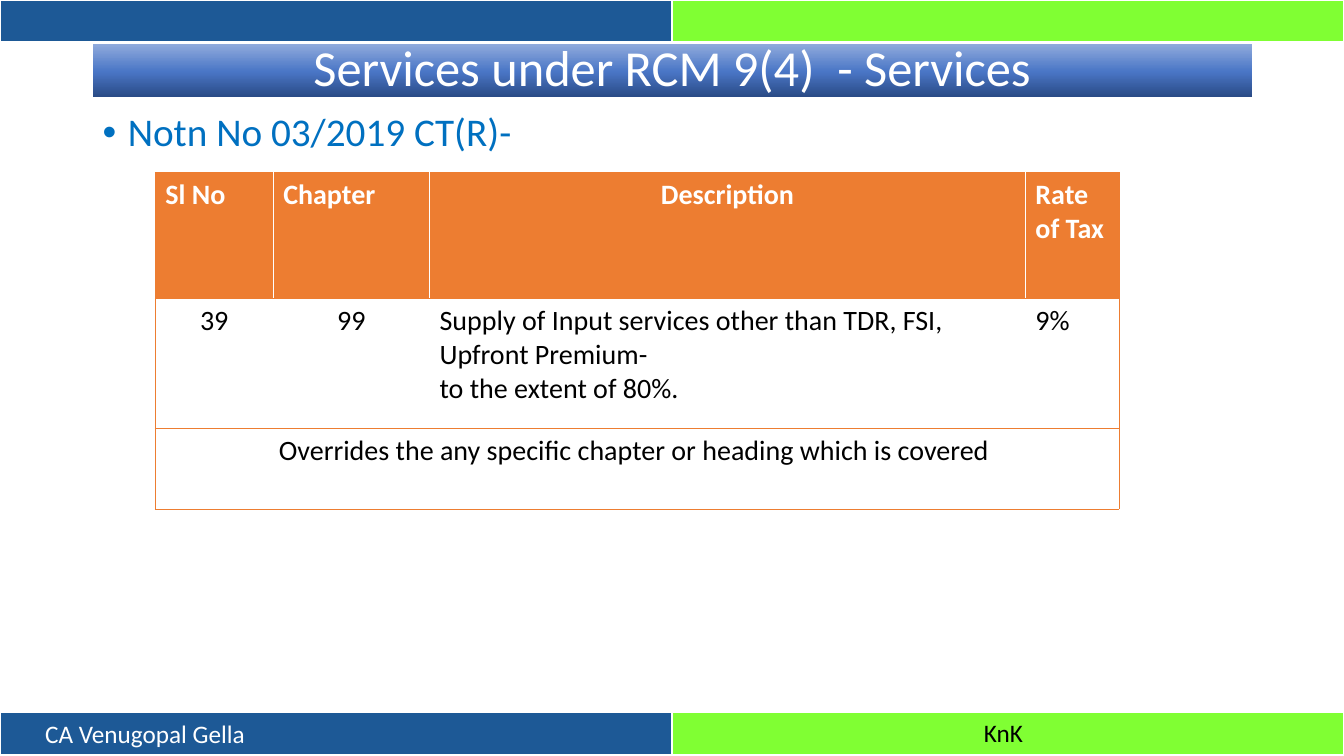
from copy import deepcopy

from lxml import etree
from pptx import Presentation
from pptx.dml.color import RGBColor
from pptx.enum import shapes, text
from pptx.oxml import ns
from pptx.util import Inches, Pt

COLORS = {
    "navy": "1D5996", "lime": "80FF33", "white": "FFFFFF", "black": "000000",
    "orange": "ED7D31", "blue": "0070C0",
    "title_dark": "2A4B86", "title_mid": "4A76C6", "title_light": "8FAADC",
}
FONT = "Calibri"
ALIGN = text.PP_ALIGN
PAGE_WIDTH, PAGE_HEIGHT, BAND_HEIGHT = 13.33, 7.5, 0.43


def color(name):
    return RGBColor.from_string(COLORS[name])


def write(frame, wording, size=20, ink="black", bold=False, align=ALIGN.LEFT,
          spacing=None, before=None):
    """Fill a text frame, one paragraph for each line of the wording."""
    for index, line in enumerate(wording.split("\n")):
        para = frame.add_paragraph() if index else frame.paragraphs[0]
        para.alignment = align
        if spacing:
            para.line_spacing = spacing
        if before is not None:
            para.space_before = Pt(before)
        span = para.add_run()
        span.text = line
        span.font.name, span.font.size, span.font.bold = FONT, Pt(size), bold
        span.font.color.rgb = color(ink)


def add_border(cell, sides, ink, width):
    """Draw cell edges; sides is a string of the letters L, R, T and B."""
    properties = cell._tc.get_or_add_tcPr()
    for position, side in enumerate(s for s in "LRTB" if s in sides):
        line = etree.Element(ns.qn(f"a:ln{side}"), w=str(Pt(width)))
        fill = etree.SubElement(line, ns.qn("a:solidFill"))
        etree.SubElement(fill, ns.qn("a:srgbClr"), val=COLORS[ink])
        properties.insert(position, line)


def add_grid(page, box, widths, heights):
    left, top = box
    frame = page.shapes.add_table(
        len(heights), len(widths), Inches(left), Inches(top),
        Inches(sum(widths)), Inches(sum(heights)))
    table = frame.table
    table.first_row = table.horz_banding = False
    for column, width in zip(table.columns, widths):
        column.width = Inches(width)
    for row, height in zip(table.rows, heights):
        row.height = Inches(height)
    return table


def add_band(page, top):
    """Two-coloured band across the page."""
    table = add_grid(page, (0, top), [PAGE_WIDTH / 2] * 2, [BAND_HEIGHT])
    for cell, fill in zip(table.iter_cells(), ("navy", "lime")):
        cell.fill.solid()
        cell.fill.fore_color.rgb = color(fill)
        add_border(cell, "LRT", "white", 1)
        add_border_bottom = "B"
        add_border(cell, add_border_bottom, "white", 3)


def add_label(page, box, wording, **style):
    label = page.shapes.add_textbox(*map(Inches, box))
    label.text_frame.word_wrap = False
    write(label.text_frame, wording, size=18, **style)


def add_title(page, box, wording):
    """Title bar, shaded from dark at the bottom to light at the top."""
    bar = page.shapes.add_shape(shapes.MSO_SHAPE.RECTANGLE, *map(Inches, box))
    bar.shadow.inherit = False
    bar.line.fill.background()
    bar.fill.gradient()
    bar.fill.gradient_angle = 90
    stop_list = bar._element.spPr.find(ns.qn("a:gradFill")).find(ns.qn("a:gsLst"))
    stop_list.insert(1, deepcopy(stop_list[0]))
    shades = ((0, "title_dark"), (0.48, "title_mid"), (1, "title_light"))
    for stop, (position, shade) in zip(bar.fill.gradient_stops, shades):
        stop.position = position
        stop.color.rgb = color(shade)
    bar.text_frame.word_wrap = True
    bar.text_frame.vertical_anchor = text.MSO_ANCHOR.MIDDLE
    write(bar.text_frame, wording, size=36, ink="white",
          align=ALIGN.CENTER, spacing=0.9)


def add_body(page, box, wording):
    """White panel with one bulleted line."""
    panel = page.shapes.add_shape(shapes.MSO_SHAPE.RECTANGLE, *map(Inches, box))
    panel.shadow.inherit = False
    panel.fill.solid()
    panel.fill.fore_color.rgb = color("white")
    panel.line.fill.background()
    frame = panel.text_frame
    frame.word_wrap = True
    frame.vertical_anchor = text.MSO_ANCHOR.TOP
    write(frame, wording, size=28, ink="blue", align=ALIGN.JUSTIFY,
          spacing=0.9, before=10)
    properties = frame.paragraphs[0]._p.get_or_add_pPr()
    properties.set("marL", str(Inches(0.25)))
    properties.set("indent", str(-Inches(0.25)))
    etree.SubElement(properties, ns.qn("a:buFont"), typeface="Arial")
    etree.SubElement(properties, ns.qn("a:buChar"), char="•")


def add_tax_table(page, box):
    """Orange header, one service row and a note across all columns."""
    rows = [
        ["Sl No", "Chapter", "Description", "Rate of Tax"],
        ["39", "99", "Supply of Input services other than TDR, FSI, "
         "Upfront Premium-\nto the extent of 80%.", "9%"],
        ["Overrides the any specific chapter or heading which is covered ",
         "", "", ""],
    ]
    centered = {(0, 2), (1, 0), (1, 1), (2, 0)}
    table = add_grid(page, box, [1.17, 1.55, 5.91, 0.93], [1.25, 1.29, 0.8])
    table.cell(2, 0).merge(table.cell(2, 3))
    for r, row in enumerate(rows):
        for c, wording in enumerate(row):
            cell, header = table.cell(r, c), r == 0
            if header:
                cell.fill.solid()
                cell.fill.fore_color.rgb = color("orange")
            else:
                cell.fill.background()
            sides = "TB" + ("L" if c == 0 else "") + ("R" if c == 3 or r == 2 else "")
            add_border(cell, sides, "orange", 0.5)
            if wording:
                write(cell.text_frame, wording, bold=header,
                      ink="white" if header else "black",
                      align=ALIGN.CENTER if (r, c) in centered else ALIGN.LEFT)


def main():
    deck = Presentation()
    deck.slide_width, deck.slide_height = Inches(PAGE_WIDTH), Inches(PAGE_HEIGHT)
    page = deck.slides.add_slide(deck.slide_layouts[6])

    # Bands and footer labels
    for top in (PAGE_HEIGHT - BAND_HEIGHT, 0):
        add_band(page, top)
    add_label(page, (0.35, 7.08, 2.21, 0.4), "CA Venugopal Gella", ink="white")
    add_label(page, (9.66, 7.07, 0.62, 0.4), "KnK")

    # Content
    add_title(page, (0.92, 0.44, 11.5, 0.52), "Services under RCM 9(4)  - Services")
    add_body(page, (0.92, 1.07, 11.5, 5.69), "Notn No 03/2019 CT(R)-")
    add_tax_table(page, (1.54, 1.71))
    deck.save("out.pptx")


if __name__ == "__main__":
    main()
